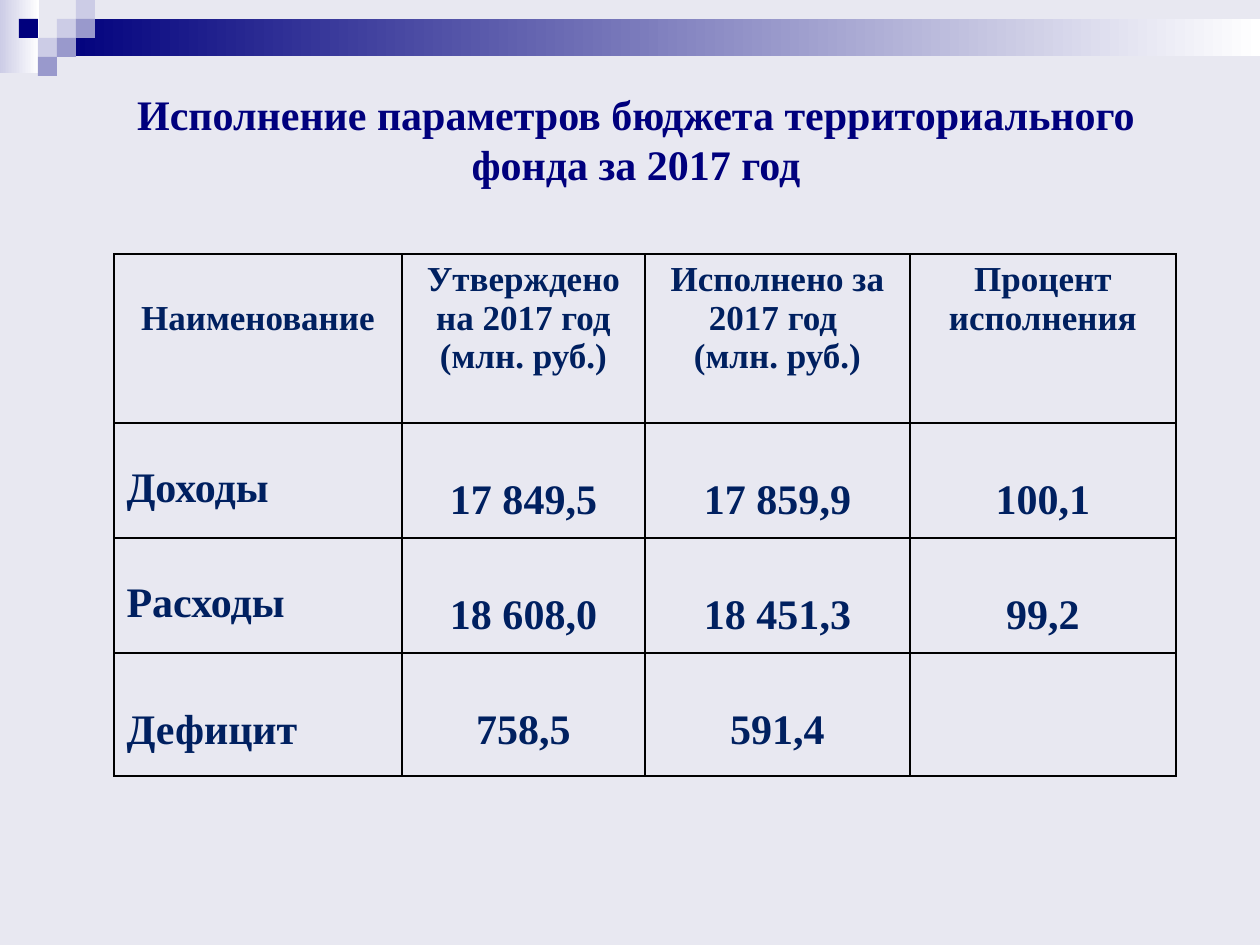
from dataclasses import dataclass

from lxml import etree
from pptx import Presentation
from pptx.dml.color import RGBColor
from pptx.enum import shapes, text
from pptx.oxml import ns
from pptx.util import Emu, Pt

EMU_PER_PX = 914400 / 126
FONT = "Times New Roman"
NAVY = RGBColor(0x00, 0x00, 0x7D)
INK = RGBColor(0x00, 0x20, 0x60)
LILAC = RGBColor(0xCC, 0xCC, 0xE6)
VIOLET = RGBColor(0x99, 0x99, 0xCC)
WHITE = RGBColor(0xFF, 0xFF, 0xFF)
BLACK = RGBColor(0x00, 0x00, 0x00)
BACKDROP = RGBColor(0xE8, 0xE8, 0xF1)

SQUARE = 19
CELL_MARGIN = 6
COLUMN_WIDTHS = (288, 243, 265, 266)
ROW_HEIGHTS = (169, 115, 115, 123)


@dataclass(frozen=True)
class Band:
    left: int
    top: int
    width: int
    height: int
    color: RGBColor


@dataclass(frozen=True)
class Square:
    column: int
    row: int
    color: RGBColor


@dataclass(frozen=True)
class Entry:
    lines: tuple[str, ...]
    size: int = 24
    gap: int = 48
    align: text.PP_ALIGN = text.PP_ALIGN.CENTER


def header(*lines: str, gap: int = 0) -> Entry:
    return Entry(lines, size=20, gap=gap)


def label(name: str, gap: int) -> Entry:
    return Entry((name,), gap=gap, align=text.PP_ALIGN.LEFT)


def numbers(*values: str) -> tuple[Entry, ...]:
    return tuple(Entry((value,)) for value in values)


BANDS = (Band(0, 0, 39, 73, LILAC), Band(57, 19, 1203, 37, NAVY))
SQUARES = (
    Square(3, 1, LILAC),
    Square(4, 0, LILAC),
    Square(4, 1, VIOLET),
    Square(2, 2, LILAC),
    Square(1, 1, NAVY),
    Square(3, 2, VIOLET),
    Square(2, 3, VIOLET),
)
BUDGET = (
    (
        header("Наименование", gap=39),
        header("Утверждено на 2017 год", "(млн. руб.)"),
        header("Исполнено за 2017 год ", "(млн. руб.)"),
        header("Процент исполнения"),
    ),
    (label("Доходы", 36), *numbers("17 849,5", "17 859,9", "100,1")),
    (label("Расходы", 36), *numbers("18 608,0", "18 451,3", "99,2")),
    (label("Дефицит", 48), *numbers("758,5", "591,4", "")),
)


def px(length: int) -> Emu:
    return Emu(round(length * EMU_PER_PX))


def style_paragraph(para, size: int, color: RGBColor, align: text.PP_ALIGN) -> None:
    para.alignment = align
    para.font.name = FONT
    para.font.size = Pt(size)
    para.font.bold = True
    para.font.color.rgb = color


def add_rectangle(page, left: int, top: int, width: int, height: int):
    box = page.shapes.add_shape(
        shapes.MSO_SHAPE.RECTANGLE, px(left), px(top), px(width), px(height)
    )
    box.shadow.inherit = False
    box.line.fill.background()
    return box


def draw_band(page, band: Band) -> None:
    box = add_rectangle(page, band.left, band.top, band.width, band.height)
    box.fill.gradient()
    box.fill.gradient_angle = 0
    for stop, position, color in zip(box.fill.gradient_stops, (0, 1), (band.color, WHITE)):
        stop.position = position
        stop.color.rgb = color


def draw_square(page, square: Square) -> None:
    box = add_rectangle(page, square.column * SQUARE, square.row * SQUARE, SQUARE, SQUARE)
    box.fill.solid()
    box.fill.fore_color.rgb = square.color


def draw_title(page, words: str) -> None:
    title = page.shapes.title
    title.left, title.top, title.width, title.height = map(px, (105, 63, 1062, 151))
    frame = title.text_frame
    frame.text = words
    frame.word_wrap = True
    frame.auto_size = text.MSO_AUTO_SIZE.NONE
    frame.vertical_anchor = text.MSO_ANCHOR.MIDDLE
    style_paragraph(frame.paragraphs[0], 24, NAVY, text.PP_ALIGN.CENTER)


def add_borders(cell) -> None:
    properties = cell._tc.get_or_add_tcPr()
    for side in ("a:lnL", "a:lnR", "a:lnT", "a:lnB"):
        line = etree.SubElement(properties, ns.qn(side), w=str(Pt(1)))
        fill = etree.SubElement(line, ns.qn("a:solidFill"))
        etree.SubElement(fill, ns.qn("a:srgbClr"), val=str(BLACK))


def fill_cell(cell, entry: Entry) -> None:
    add_borders(cell)
    cell.fill.background()
    cell.margin_top = px(CELL_MARGIN + entry.gap)
    cell.vertical_anchor = text.MSO_ANCHOR.TOP
    cell.text_frame.text = "\n".join(entry.lines)
    for para in cell.text_frame.paragraphs:
        style_paragraph(para, entry.size, INK, entry.align)


def draw_table(page, rows: tuple[tuple[Entry, ...], ...]) -> None:
    table = page.shapes.add_table(
        len(ROW_HEIGHTS), len(COLUMN_WIDTHS), px(114), px(254),
        px(sum(COLUMN_WIDTHS)), px(sum(ROW_HEIGHTS)),
    ).table
    table.first_row = False
    table.horz_banding = False
    for column, width in zip(table.columns, COLUMN_WIDTHS):
        column.width = px(width)
    for row, height, entries in zip(table.rows, ROW_HEIGHTS, rows):
        row.height = px(height)
        for cell, entry in zip(row.cells, entries):
            fill_cell(cell, entry)


def main() -> None:
    deck = Presentation()
    deck.slide_width, deck.slide_height = px(1260), px(945)
    page = deck.slides.add_slide(deck.slide_layouts.get_by_name("Title Only"))
    page.background.fill.solid()
    page.background.fill.fore_color.rgb = BACKDROP
    for band in BANDS:
        draw_band(page, band)
    for square in SQUARES:
        draw_square(page, square)
    draw_title(page, "Исполнение параметров бюджета территориального фонда за 2017 год")
    draw_table(page, BUDGET)
    deck.save("out.pptx")


if __name__ == "__main__":
    main()
